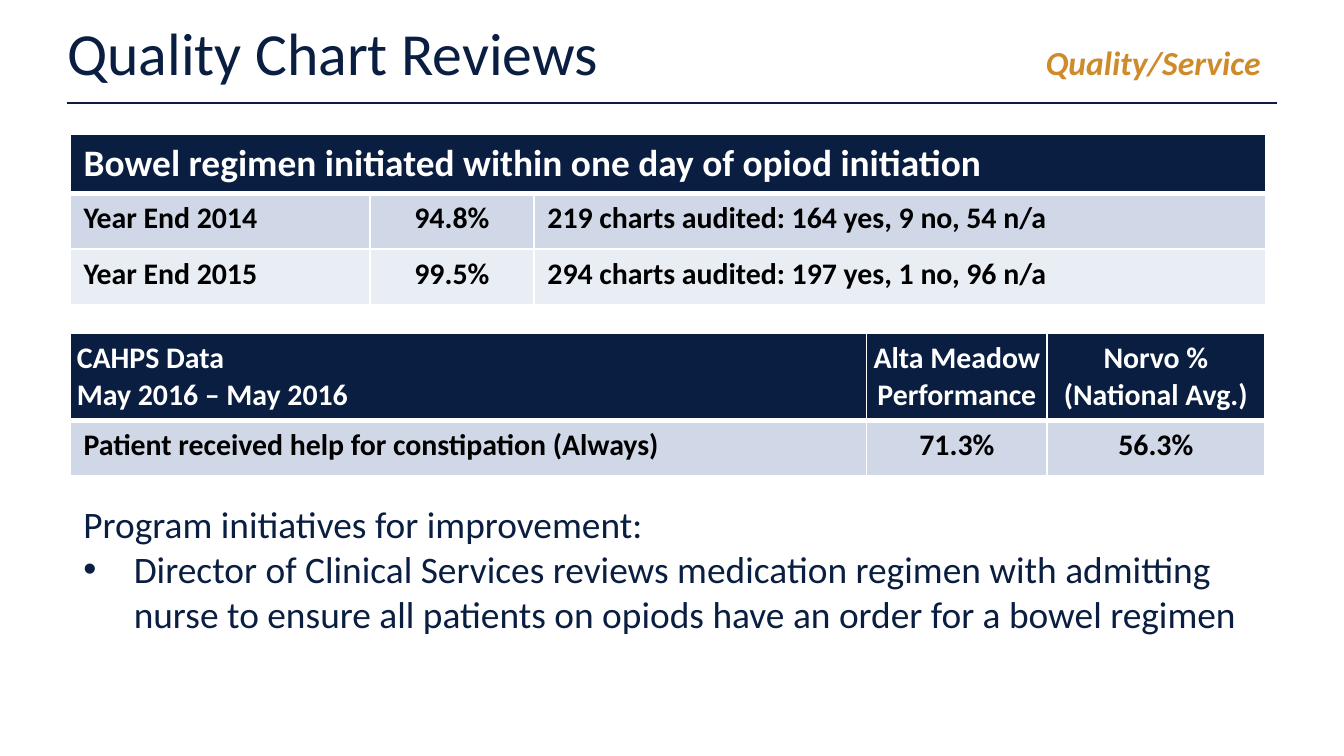
from copy import deepcopy

from pptx import Presentation
from pptx import util as u
from pptx.dml.color import RGBColor
from pptx.enum import shapes, text
from pptx.oxml import ns
from lxml import etree

Pt = u.Pt
FONT = "Calibri"
NAVY = RGBColor(0x09, 0x1E, 0x40)
GOLD = RGBColor(0xCF, 0x8A, 0x2A)
WHITE = RGBColor(0xFF, 0xFF, 0xFF)
BLACK = RGBColor(0, 0, 0)
BANDS = [RGBColor(0xD0, 0xD8, 0xE8), RGBColor(0xE9, 0xED, 0xF4)]

# Content
TITLE, TOPIC = "Quality Chart Reviews", "Quality/Service"
TABLES = [
    {
        "top": 72, "widths": [160.5, 88, 392], "heights": [29.7, 29.7, 29.7],
        "centred": [1], "header_size": 20, "header_inset": 7.2,
        "rows": [
            ["Bowel regimen initiated within one day of opiod initiation"],
            ["Year End 2014", "94.8%", "219 charts audited: 164 yes, 9 no, 54 n/a"],
            ["Year End 2015", "99.5%", "294 charts audited: 197 yes, 1 no, 96 n/a"],
        ],
    },
    {
        "top": 178.7, "widths": [426.7, 96.7, 116.5], "heights": [45, 29.7],
        "centred": [1, 2], "header_size": 16, "header_inset": 3.6,
        "rows": [
            ["CAHPS Data\vMay 2016 – May 2016", "Alta Meadow Performance",
             "Norvo %\v(National Avg.)"],
            ["Patient received help for constipation (Always)", "71.3%", "56.3%"],
        ],
    },
]
INITIATIVES = [
    "Program initiatives for improvement:",
    "Director of Clinical Services reviews medication regimen with admitting "
    "nurse to ensure all patients on opiods have an order for a bowel regimen",
]
LEFT = 37.6


def style(span, size, color, bold=False, italic=False):
    font = span.font
    font.name, font.size, font.bold, font.italic = FONT, Pt(size), bold, italic
    font.color.rgb = color


def add_borders(cell, bottom):
    properties = cell._tc.get_or_add_tcPr()
    for side, width in zip("LRTB", (1, 1, 1, bottom)):
        line = etree.SubElement(properties, ns.qn(f"a:ln{side}"), w=str(Pt(width)))
        fill = etree.SubElement(line, ns.qn("a:solidFill"))
        etree.SubElement(fill, ns.qn("a:srgbClr"), val=str(WHITE))


def fill_cell(cell, words, size, color, fill, inset, centred, bottom):
    add_borders(cell, bottom)
    cell.fill.solid()
    cell.fill.fore_color.rgb = fill
    cell.margin_left = cell.margin_right = Pt(inset)
    cell.margin_top = cell.margin_bottom = Pt(3.6)
    cell.text_frame.text = words
    para = cell.text_frame.paragraphs[0]
    para.alignment = text.PP_ALIGN.CENTER if centred else text.PP_ALIGN.LEFT
    for span in para.runs:
        style(span, size, color, bold=True)
    # Line breaks take the size of the text around them
    for line_break in para._p.findall(ns.qn("a:br")):
        line_break.append(deepcopy(para.runs[0]._r.rPr))


def add_table(page, data):
    rows, widths, heights = data["rows"], data["widths"], data["heights"]
    table = page.shapes.add_table(
        len(rows), len(widths), Pt(LEFT), Pt(data["top"]),
        Pt(sum(widths)), Pt(sum(heights))).table
    table.first_row = table.horz_banding = False
    for column, width in zip(table.columns, widths):
        column.width = Pt(width)
    for row, height in zip(table.rows, heights):
        row.height = Pt(height)
    if len(rows[0]) == 1:
        table.cell(0, 0).merge(table.cell(0, len(widths) - 1))
    for r, row in enumerate(rows):
        for c, words in enumerate(row):
            centred = c in data["centred"]
            if r == 0:
                fill_cell(table.cell(r, c), words, data["header_size"], WHITE, NAVY,
                          data["header_inset"], centred, 3)
            else:
                fill_cell(table.cell(r, c), words, 16, BLACK, BANDS[(r - 1) % 2],
                          7.2, centred, 1)


deck = Presentation()
deck.slide_width, deck.slide_height = Pt(720), Pt(405)
page = deck.slides.add_slide(deck.slide_layouts[5])

# Title with the topic on a right tab
title = page.shapes.title
title.left, title.top, title.width, title.height = Pt(0), Pt(0), Pt(720), Pt(55.4)
frame = title.text_frame
frame.auto_size = text.MSO_AUTO_SIZE.NONE
frame.vertical_anchor = text.MSO_ANCHOR.MIDDLE
frame.margin_left = frame.margin_right = Pt(36)
frame.margin_top = frame.margin_bottom = Pt(7.2)
frame.text = TITLE + "\t"
para = frame.paragraphs[0]
para.alignment = text.PP_ALIGN.LEFT
tabs = etree.SubElement(para._p.get_or_add_pPr(), ns.qn("a:tabLst"))
etree.SubElement(tabs, ns.qn("a:tab"), pos=str(Pt(639.4)), algn="r")
style(para.runs[0], 32, NAVY)
topic = para.add_run()
topic.text = TOPIC
style(topic, 18, GOLD, bold=True, italic=True)

# Rule under the title
rule = page.shapes.add_connector(
    shapes.MSO_CONNECTOR.STRAIGHT, Pt(36), Pt(55.4), Pt(684), Pt(55.4))
rule.line.color.rgb = NAVY
rule.line.width = Pt(1)
etree.SubElement(rule._element.spPr, ns.qn("a:effectLst"))

# Tables
for data in TABLES:
    add_table(page, data)

# Initiatives
box = page.shapes.add_textbox(Pt(LEFT), Pt(265), Pt(659.5), Pt(101.5))
frame = box.text_frame
frame.word_wrap = True
frame.text = "\n".join(INITIATIVES)
for para in frame.paragraphs:
    style(para.runs[0], 20, NAVY)
for para in frame.paragraphs[1:]:
    properties = para._p.get_or_add_pPr()
    properties.set("marL", str(Pt(27)))
    properties.set("indent", str(-Pt(27)))
    etree.SubElement(properties, ns.qn("a:buFont"), typeface="Arial")
    etree.SubElement(properties, ns.qn("a:buChar"), char="•")

deck.save("out.pptx")
